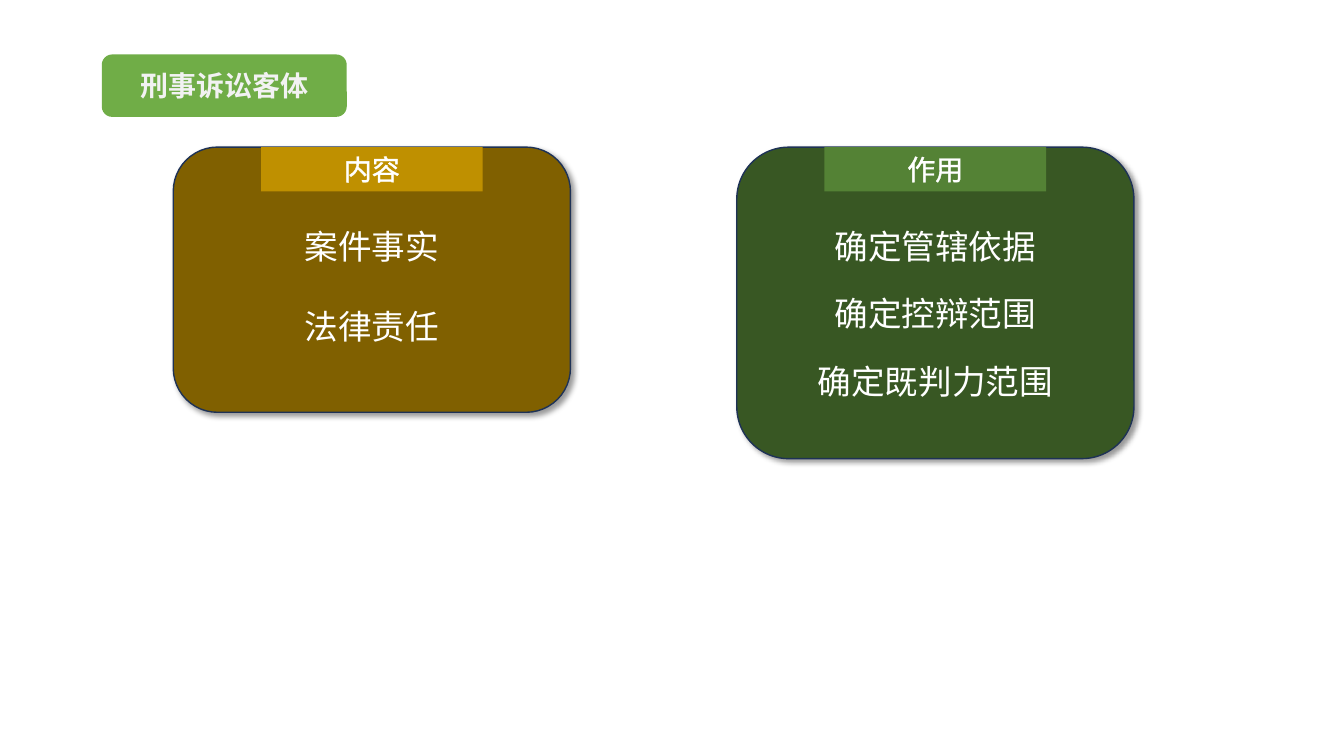
from lxml import etree
from pptx import Presentation
from pptx.dml import color
from pptx.enum import shapes, text
from pptx.oxml import ns, parse_xml
from pptx.util import Pt

FONT = "Noto Sans CJK JP"
SHADOW = f"""<a:effectLst {ns.nsdecls('a')}>
<a:outerShdw blurRad="50800" dist="38100" dir="2700000" algn="tl" rotWithShape="0">
<a:srgbClr val="000000"><a:alpha val="40000"/></a:srgbClr></a:outerShdw></a:effectLst>"""
OUTLINE = f"""<a:ln {ns.nsdecls('a')} w="9525"><a:solidFill>
<a:srgbClr val="FFFFFF"/></a:solidFill></a:ln>"""


def rgb(value):
    return color.RGBColor.from_string(value)


def add_box(kind, left, top, width, height, fill=None, words="", size=24, ink="FFFFFF"):
    area = [Pt(value) for value in (left, top, width, height)]
    if kind is None:
        box = page.shapes.add_textbox(*area)
    else:
        box = page.shapes.add_shape(kind, *area)
        box.shadow.inherit = False
        box.fill.solid()
        box.fill.fore_color.rgb = rgb(fill)
        box.line.fill.background()
    if words:
        box.text_frame.word_wrap = True
        para = box.text_frame.paragraphs[0]
        para.alignment = text.PP_ALIGN.CENTER
        para.add_run().text = words
        para.font.size = Pt(size)
        para.font.name = FONT
        para.font.color.rgb = rgb(ink)
        properties = para._p.pPr.find(ns.qn("a:defRPr"))
        etree.SubElement(properties, ns.qn("a:ea"), typeface=FONT)
    return box


deck = Presentation()
deck.slide_width, deck.slide_height = Pt(960), Pt(540)
page = deck.slides.add_slide(deck.slide_layouts[6])

ROUNDED = shapes.MSO_SHAPE.ROUNDED_RECTANGLE
RECTANGLE = shapes.MSO_SHAPE.RECTANGLE

title = add_box(ROUNDED, 72.7, 38.9, 175, 44.6, "70AD47", "刑事诉讼客体", 20, "F2F2F2")
title.text_frame.paragraphs[0].font.bold = True

CARD_TOP, CARD_WIDTH = 105.1, 283.7
TAB_WIDTH, ITEM_WIDTH = 158.4, 187.2
cards = [
    (123.8, 189.4, "806000", "BF9000", "内容", 57.6, ["案件事实", "法律责任"]),
    (526.3, 222.5, "385723", "548235", "作用", 48.2,
     ["确定管辖依据", "确定控辩范围", "确定既判力范围"]),
]
for left, height, card_fill, tab_fill, heading, pitch, items in cards:
    card = add_box(ROUNDED, left, CARD_TOP, CARD_WIDTH, height, card_fill)
    card.line.color.rgb = rgb("1E3256")
    card.line.width = Pt(1)
    card._element.spPr.replace(card._element.spPr.find(ns.qn("a:effectLst")), parse_xml(SHADOW))

    middle = left + CARD_WIDTH / 2
    tab = add_box(RECTANGLE, middle - TAB_WIDTH / 2, CARD_TOP, TAB_WIDTH, 31.7,
                  tab_fill, heading, 20)
    tab.text_frame.vertical_anchor = text.MSO_ANCHOR.TOP
    tab.text_frame.paragraphs[0]._p.pPr.find(ns.qn("a:defRPr")).insert(0, parse_xml(OUTLINE))

    for row, item in enumerate(items):
        add_box(None, middle - ITEM_WIDTH / 2, 157.7 + row * pitch, ITEM_WIDTH, 36, words=item)

deck.save("out.pptx")
